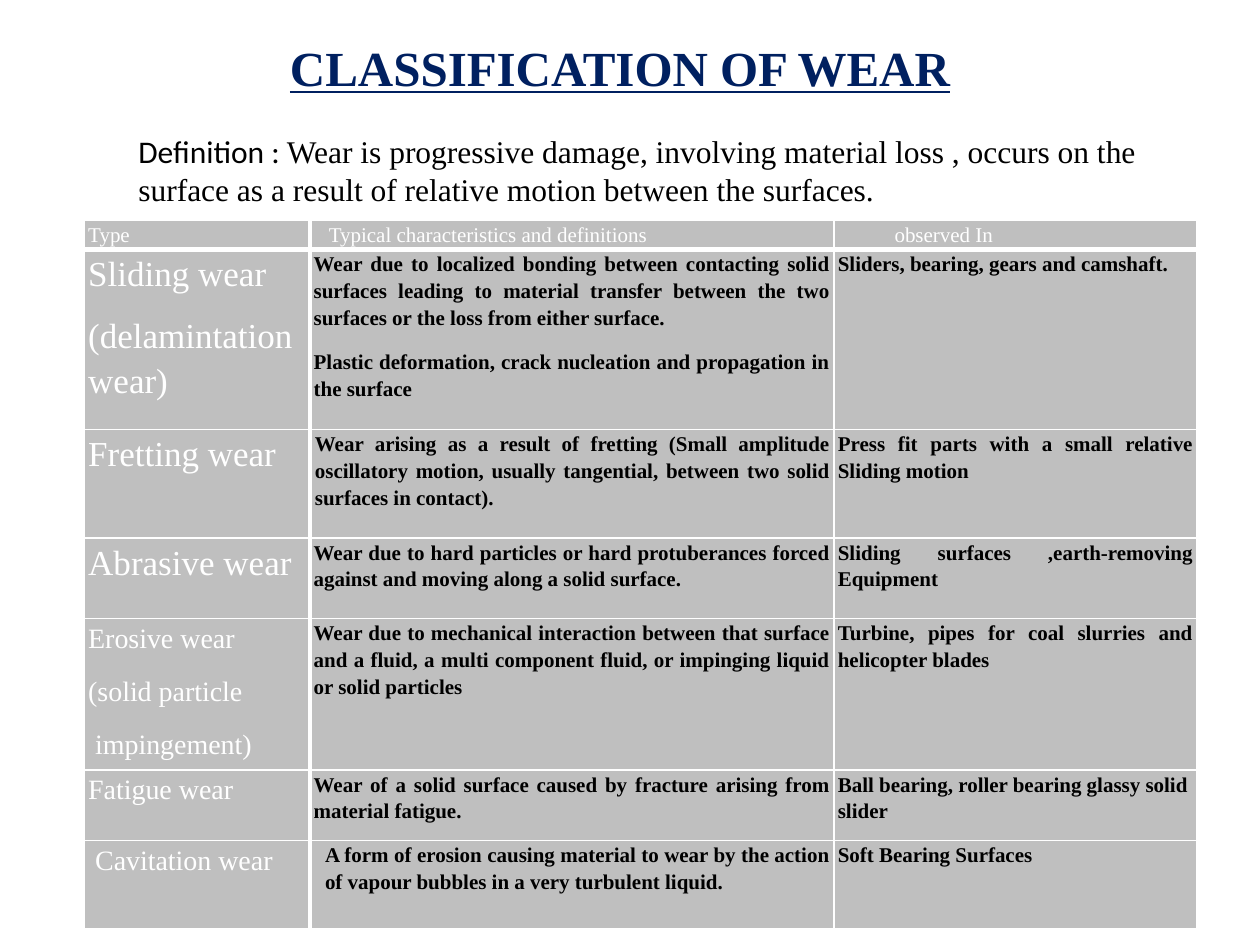
from dataclasses import dataclass

from lxml import etree
from pptx import Presentation
from pptx.dml.color import RGBColor
from pptx.enum import text
from pptx.oxml import ns
from pptx.util import Inches, Pt


@dataclass(frozen=True)
class Theme:
    """Colours, fonts and type sizes of the slide."""
    navy: str = "002060"
    black: str = "000000"
    white: str = "FFFFFF"
    grey: str = "BFBFBF"
    serif: str = "Times New Roman"
    sans: str = "Calibri"
    title: int = 28
    definition: int = 18
    body: int = 12
    large_type: int = 20
    small_type: int = 16
    thin: int = 1
    thick: int = 3


THEME = Theme()
JUSTIFY = text.PP_ALIGN.JUSTIFY
LEFT = text.PP_ALIGN.LEFT

COLUMN_WIDTHS = [1.79, 4.16, 2.88]
HEADERS = [("Type", 0), ("Typical characteristics and definitions", 0.12), ("observed In", 0.45)]
WEAR_TYPES = [
    # height, type size, type, characteristics, indent, observed in, alignment
    (1.43, THEME.large_type, "Sliding wear\n(delamintation wear)",
     "Wear due to localized bonding between contacting solid surfaces leading to material "
     "transfer between the two surfaces or the loss from either surface.\n"
     "Plastic deformation, crack nucleation and propagation in the surface", 0,
     "Sliders, bearing, gears and camshaft.", JUSTIFY),
    (0.86, THEME.large_type, "Fretting wear",
     "Wear arising as a result of fretting (Small amplitude oscillatory motion, usually "
     "tangential, between two solid surfaces in contact).", 0.01,
     "Press fit parts with a small relative Sliding motion", JUSTIFY),
    (0.64, THEME.large_type, "Abrasive wear",
     "Wear due to hard particles or hard protuberances forced against and moving along a "
     "solid surface.", 0,
     "Sliding surfaces ,earth-removing Equipment", JUSTIFY),
    (1.2, THEME.small_type, "Erosive wear\n(solid particle\n impingement)",
     "Wear due to mechanical interaction between that surface and a fluid, a multi component "
     "fluid, or impinging liquid or solid particles", 0,
     "Turbine, pipes for coal slurries and helicopter blades", JUSTIFY),
    (0.56, THEME.small_type, "Fatigue wear",
     "Wear of a solid surface caused by fracture arising from material fatigue.", 0,
     "Ball bearing, roller bearing glassy solid slider", LEFT),
    (0.7, THEME.small_type, " Cavitation wear",
     "A form of erosion causing material to wear by the action of vapour bubbles in a very "
     "turbulent liquid.", 0.09,
     "Soft Bearing Surfaces", LEFT),
]


def format_run(run, size, color, font=THEME.serif, bold=False):
    """Set the type of one run."""
    run.font.name = font
    run.font.size = Pt(size)
    run.font.bold = bold
    run.font.color.rgb = RGBColor.from_string(color)


def add_text_box(slide, left, top, width, height, parts, wrap=True):
    """Add a one-paragraph text box made of (words, format) parts."""
    shape = slide.shapes.add_textbox(Inches(left), Inches(top), Inches(width), Inches(height))
    shape.text_frame.word_wrap = wrap
    shape.text_frame.auto_size = text.MSO_AUTO_SIZE.SHAPE_TO_FIT_TEXT
    paragraph = shape.text_frame.paragraphs[0]
    for words, style in parts:
        run = paragraph.add_run()
        run.text = words
        format_run(run, **style)
    return paragraph


def set_borders(cell, row, column):
    """Draw white cell borders, thick beside the header row and type column."""
    thick_sides = {"L": column == 1, "R": column == 0, "T": row == 1, "B": row == 0}
    properties = cell._tc.get_or_add_tcPr()
    for side, is_thick in thick_sides.items():
        width = Pt(THEME.thick if is_thick else THEME.thin)
        line = etree.SubElement(properties, ns.qn(f"a:ln{side}"), w=str(width))
        fill = etree.SubElement(line, ns.qn("a:solidFill"))
        etree.SubElement(fill, ns.qn("a:srgbClr"), val=THEME.white)


def fill_cell(table, row, column, words, size, color, bold=False, align=LEFT, indent=0):
    """Write and format one table cell."""
    cell = table.cell(row, column)
    set_borders(cell, row, column)
    cell.fill.solid()
    cell.fill.fore_color.rgb = RGBColor.from_string(THEME.grey)
    cell.margin_left, cell.margin_right = Inches(0.03 + indent), Inches(0.03)
    cell.margin_top = cell.margin_bottom = 0
    cell.text_frame.text = words
    for paragraph in cell.text_frame.paragraphs:
        paragraph.alignment = align
        paragraph.line_spacing = 1.15
        paragraph.space_after = Pt(10)
        for run in paragraph.runs:
            format_run(run, size, color, bold=bold)


def add_wear_table(slide):
    """Add the table of wear types."""
    heights = [0.23] + [wear[0] for wear in WEAR_TYPES]
    table = slide.shapes.add_table(
        len(heights), len(COLUMN_WIDTHS), Inches(0.67), Inches(1.75),
        Inches(sum(COLUMN_WIDTHS)), Inches(sum(heights))).table
    for column, width in zip(table.columns, COLUMN_WIDTHS):
        column.width = Inches(width)
    for row, height in zip(table.rows, heights):
        row.height = Inches(height)
    for column, (words, indent) in enumerate(HEADERS):
        fill_cell(table, 0, column, words, THEME.body, THEME.white, indent=indent)
    for row, (_, size, name, traits, indent, places, align) in enumerate(WEAR_TYPES, 1):
        fill_cell(table, row, 0, name, size, THEME.white)
        fill_cell(table, row, 1, traits, THEME.body, THEME.black, True, JUSTIFY, indent)
        fill_cell(table, row, 2, places, THEME.body, THEME.black, True, align)


def main():
    """Build and save the slide."""
    presentation = Presentation()
    presentation.slide_width, presentation.slide_height = Inches(10), Inches(7.5)
    slide = presentation.slides.add_slide(presentation.slide_layouts[6])
    title = add_text_box(slide, 2.17, 0.25, 5.5, 0.57, [
        ("CLASSIFICATION OF WEAR", dict(size=THEME.title, color=THEME.navy, bold=True)),
    ], wrap=False)
    title.alignment = text.PP_ALIGN.CENTER
    title.runs[0].font.underline = True
    add_wear_table(slide)
    definition = dict(size=THEME.definition, color=THEME.black)
    add_text_box(slide, 1, 1, 8.5, 0.71, [
        ("Definition : ", dict(definition, font=THEME.sans)),
        ("Wear is progressive damage, involving material loss , occurs on the surface as a "
         "result of relative motion between the surfaces.", definition),
    ])
    presentation.save("out.pptx")


if __name__ == "__main__":
    main()
